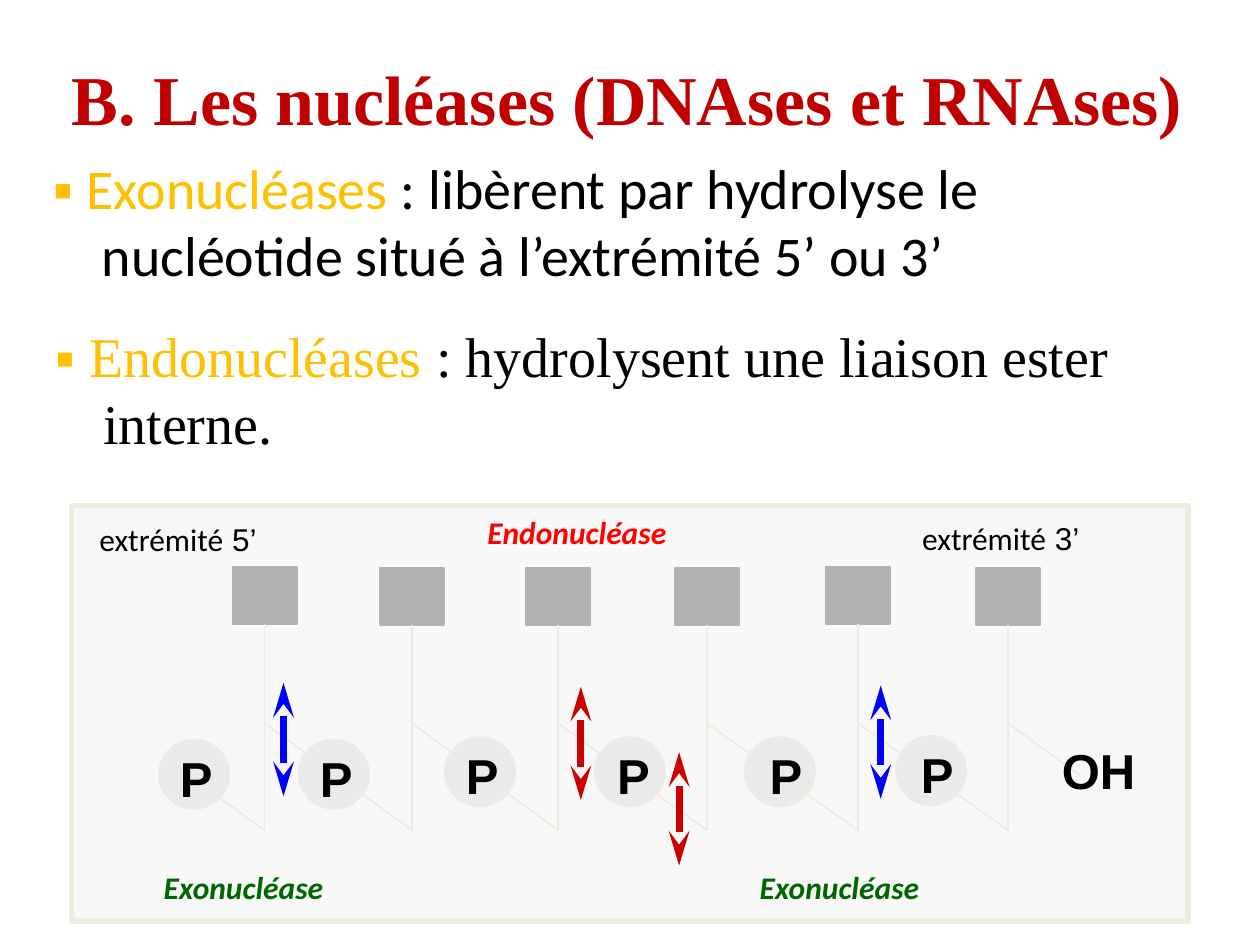
from lxml import etree
from pptx import Presentation
from pptx.dml.color import RGBColor
from pptx.enum.shapes import MSO_CONNECTOR, MSO_SHAPE
from pptx.enum.text import MSO_ANCHOR, PP_ALIGN
from pptx.oxml.ns import qn
from pptx.util import Inches, Pt

STRAIGHT = MSO_CONNECTOR.STRAIGHT
RECTANGLE, OVAL = MSO_SHAPE.RECTANGLE, MSO_SHAPE.OVAL
LEFT, CENTER = PP_ALIGN.LEFT, PP_ALIGN.CENTER
TOP, MIDDLE = MSO_ANCHOR.TOP, MSO_ANCHOR.MIDDLE
BOTTOM_SIDE = 2

BLACK, GOLD, DARK_RED = "000000", "FFC000", "C00000"
RED, BLUE, GREEN = "CC0000", "0000FF", "006600"
CREAM, PANEL_GREY, BASE_GREY, PHOSPHATE_GREY = "EEECE1", "F8F8F8", "B2B2B2", "EAEAEA"
SERIF, SANS, ARIAL = "Times New Roman", "Calibri", "Arial"

TITLE = "B. Les nucléases (DNAses et RNAses)"
DEFINITIONS = [  # left, top, font, term, explanation
    (0.33, 1.17, SANS, "▪ Exonucléases ",
     ": libèrent par hydrolyse le nucléotide situé à l’extrémité 5’ ou 3’"),
    (0.34, 2.5, SERIF, "▪ Endonucléases ", ": hydrolysent une liaison ester interne."),
]
NUCLEOTIDES = [  # stem x, base top, phosphate left, phosphate top, letter left
    (2.1, 4.5, 1.26, 5.87, 1.33),
    (3.27, 4.51, 2.37, 5.87, 2.44),
    (4.43, 4.51, 3.53, 5.85, 3.6),
    (5.61, 4.51, 4.72, 5.85, 4.8),
    (6.81, 4.5, 5.91, 5.85, 6.01),
    (8.0, 4.51, 7.11, 5.84, 7.21),
]
ENDS = [(0.69, 4.08, " 5’"), (7.22, 4.07, " 3’")]
ENZYMES = [
    (3.77, 4.02, "Endonucléase", "FF0000"),
    (1.2, 6.84, "Exonucléase", GREEN),
    (5.93, 6.84, "Exonucléase", GREEN),
]
CUTS = [(2.25, 5.42, BLUE), (4.61, 5.45, RED), (5.39, 5.97, RED), (6.99, 5.44, BLUE)]

BASE_WIDTH, BASE_HEIGHT = 0.51, 0.45
PHOSPHATE_WIDTH, PHOSPHATE_HEIGHT = 0.56, 0.55
BOND_TOP, STEM_BOTTOM = 5.74, 6.59
CUT_LENGTH = 0.9


def color(hex_value):
    return RGBColor.from_string(hex_value)


def add_text(slide, box, runs, size=18, bold=False, italic=False,
             align=LEFT, anchor=TOP, hanging=0, before=0):
    """Each run is (text, font name, colour)."""
    frame = slide.shapes.add_textbox(*map(Inches, box)).text_frame
    frame.word_wrap = True
    frame.vertical_anchor = anchor
    paragraph = frame.paragraphs[0]
    paragraph.alignment = align
    if before:
        paragraph.space_before = Pt(before)
    if hanging:
        properties = paragraph._p.get_or_add_pPr()
        properties.set("marL", str(Inches(hanging)))
        properties.set("indent", str(-Inches(hanging)))
    for text, font_name, hex_value in runs:
        run = paragraph.add_run()
        run.text = text
        font = run.font
        font.name, font.size, font.bold, font.italic = font_name, Pt(size), bold, italic
        font.color.rgb = color(hex_value)


def add_block(slide, kind, box, fill, line, width=1):
    shape = slide.shapes.add_shape(kind, *map(Inches, box))
    shape.shadow.inherit = False
    shape.fill.solid()
    shape.fill.fore_color.rgb = color(fill)
    shape.line.color.rgb = color(line)
    shape.line.width = Pt(width)
    return shape


def add_line(slide, start, end, line=CREAM, width=1, arrows=False):
    connector = slide.shapes.add_connector(STRAIGHT, *map(Inches, (*start, *end)))
    connector.line.color.rgb = color(line)
    connector.line.width = Pt(width)
    if arrows:
        outline = connector.line._get_or_add_ln()
        for tag in ("a:headEnd", "a:tailEnd"):
            etree.SubElement(outline, qn(tag), type="stealth", w="med", len="lg")
    etree.SubElement(connector._element.spPr, qn("a:effectLst"))
    return connector


def add_strand(slide):
    stems = [nucleotide[0] for nucleotide in NUCLEOTIDES]
    bonds = [((stems[0], STEM_BOTTOM), (1.52, 6.17)), ((8.58, 6.16), (stems[-1], BOND_TOP))]
    bonds += [((right, STEM_BOTTOM), (left, BOND_TOP)) for left, right in zip(stems, stems[1:])]
    for start, end in bonds:
        add_line(slide, start, end)

    for stem, base_top, left, top, letter_left in NUCLEOTIDES:
        base = add_block(slide, RECTANGLE,
                         (stem - BASE_WIDTH / 2, base_top, BASE_WIDTH, BASE_HEIGHT),
                         BASE_GREY, BASE_GREY)
        stem_line = add_line(slide, (stem, base_top + BASE_HEIGHT), (stem, STEM_BOTTOM))
        stem_line.begin_connect(base, BOTTOM_SIDE)
        add_block(slide, OVAL, (left, top, PHOSPHATE_WIDTH, PHOSPHATE_HEIGHT),
                  PHOSPHATE_GREY, CREAM)
        add_text(slide, (letter_left, top + 0.02, 0.46, 0.57), [("P", ARIAL, BLACK)],
                 size=28, bold=True)
    add_text(slide, (8.33, 5.83, 0.8, 0.57), [("OH", ARIAL, BLACK)], size=28, bold=True)


def main():
    presentation = Presentation()
    presentation.slide_width, presentation.slide_height = Inches(10), Inches(7.5)
    slide = presentation.slides.add_slide(presentation.slide_layouts[6])

    add_text(slide, (0, 0.4, 9.96, 0.74), [(TITLE, SERIF, DARK_RED)],
             size=40, bold=True, align=CENTER, anchor=MIDDLE)
    for left, top, font_name, term, explanation in DEFINITIONS:
        add_text(slide, (left, top, 9.34, 1.2),
                 [(term, font_name, GOLD), (explanation, font_name, BLACK)],
                 size=32, hanging=0.38, before=6.4)

    add_block(slide, RECTANGLE, (0.57, 4.01, 8.86, 3.3), PANEL_GREY, CREAM, width=3)
    add_strand(slide)
    for left, top, end in ENDS:
        add_text(slide, (left, top, 2.12, 0.5),
                 [("extrémité", SANS, BLACK), (end, ARIAL, BLACK)])
    for left, top, name, hex_value in ENZYMES:
        add_text(slide, (left, top, 2.11, 0.5), [(name, SANS, hex_value)],
                 bold=True, italic=True)
    for x, top, hex_value in CUTS:
        add_line(slide, (x, top), (x, top + CUT_LENGTH), hex_value, width=4, arrows=True)

    presentation.save("out.pptx")


if __name__ == "__main__":
    main()
